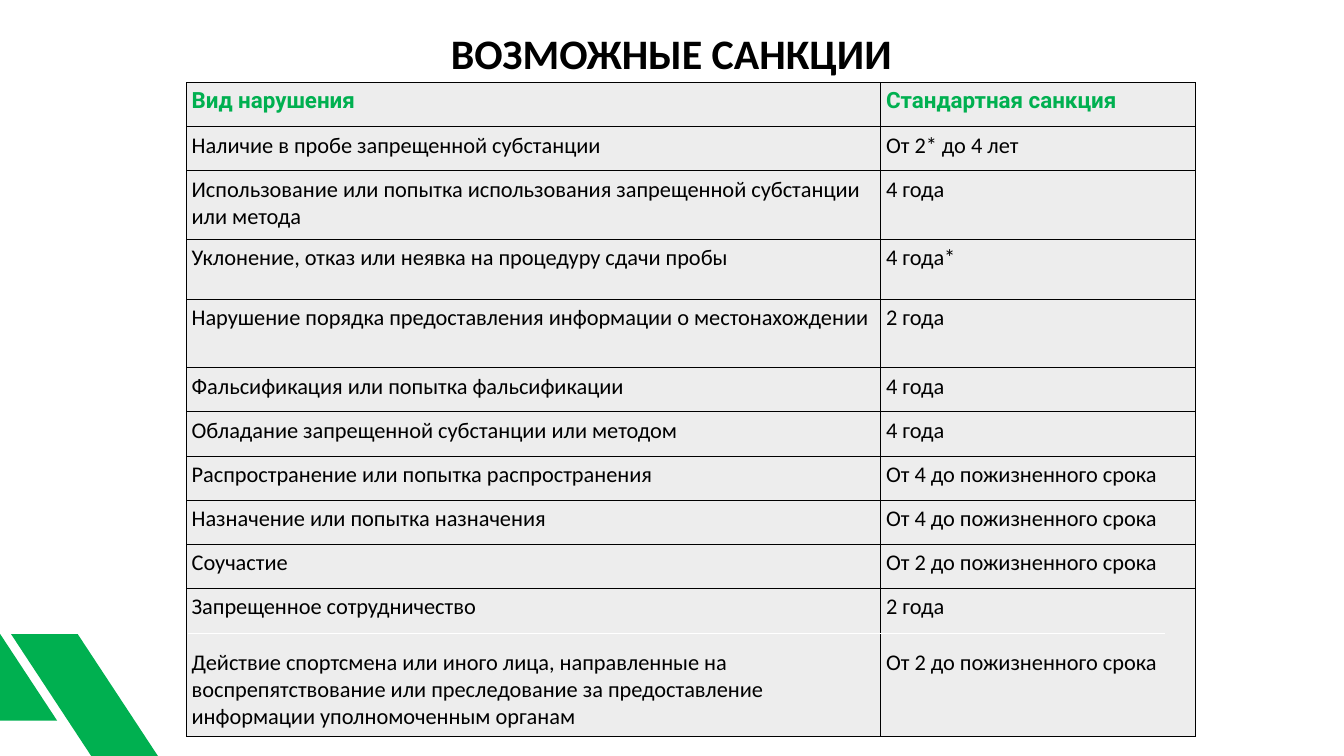
"""Build a slide with a table of possible anti-doping sanctions."""
from typing import NamedTuple

from lxml.etree import SubElement
from pptx import Presentation
from pptx.dml.color import RGBColor
from pptx.enum.shapes import MSO_CONNECTOR as Connector
from pptx.enum.text import PP_ALIGN as Align
from pptx.oxml import parse_xml
from pptx.oxml.ns import nsdecls, qn
from pptx.shapes.shapetree import SlideShapes
from pptx.table import _Cell as Cell
from pptx.text.text import TextFrame
from pptx.util import Cm, Pt

COLORS = {"green": "00B050", "cell": "EDEDED", "black": "000000", "white": "FFFFFF"}
INSET = Cm(0.13)
COLUMN_WIDTHS = (17.5, 7.92)
SINGLE, MEDIUM, DOUBLE, COMBINED = 1.11, 1.51, 1.73, 3.73


class Sanction(NamedTuple):
    violations: str
    penalties: str
    height: float = SINGLE


class Stripe(NamedTuple):
    left: float
    top: float


SANCTIONS = (
    Sanction("Вид нарушения", "Стандартная санкция"),
    Sanction("Наличие в пробе запрещенной субстанции", "От 2* до 4 лет"),
    Sanction("Использование или попытка использования запрещенной субстанции или метода",
             "4 года", DOUBLE),
    Sanction("Уклонение, отказ или неявка на процедуру сдачи пробы", "4 года*", MEDIUM),
    Sanction("Нарушение порядка предоставления информации о местонахождении",
             "2 года", DOUBLE),
    Sanction("Фальсификация или попытка фальсификации", "4 года"),
    Sanction("Обладание запрещенной субстанции или методом", "4 года"),
    Sanction("Распространение или попытка распространения", "От 4 до пожизненного срока"),
    Sanction("Назначение или попытка назначения", "От 4 до пожизненного срока"),
    Sanction("Соучастие", "От 2 до пожизненного срока"),
    Sanction("Запрещенное сотрудничество\n"
             "Действие спортсмена или иного лица, направленные на воспрепятствование "
             "или преследование за предоставление информации уполномоченным органам",
             "2 года\nОт 2 до пожизненного срока", COMBINED),
)
STRIPES = (Stripe(0.28, 15.98), Stripe(-2.26, 15.09))
STRIPE_OUTLINE = ((3.7, 3.07), (1.68, 0), (0, 0), (2.02, 3.07))


def rgb(name: str) -> RGBColor:
    return RGBColor.from_string(COLORS[name])


def write(frame: TextFrame, text: str, *, size: float = 16, font: str = "Calibri",
          color: str = "black", bold: bool = False, align: Align = Align.LEFT,
          gap: float = 20) -> None:
    frame.word_wrap = True
    for index, line in enumerate(text.split("\n")):
        paragraph = frame.add_paragraph() if index else frame.paragraphs[0]
        paragraph.alignment = align
        paragraph.space_before = Pt(gap if index else 0)
        run = paragraph.add_run()
        run.text = line
        run.font.size, run.font.name, run.font.bold = Pt(size), font, bold
        run.font.color.rgb = rgb(color)


def add_borders(cell: Cell, width: float = 0.75) -> None:
    properties = cell._tc.get_or_add_tcPr()
    for index, side in enumerate("LRTB"):
        properties.insert(index, parse_xml(
            f'<a:ln{side} {nsdecls("a")} w="{Pt(width)}"><a:solidFill>'
            f'<a:srgbClr val="{COLORS["black"]}"/></a:solidFill></a:ln{side}>'))


def draw_sanctions(shapes: SlideShapes) -> None:
    heights = [sanction.height for sanction in SANCTIONS]
    table = shapes.add_table(len(SANCTIONS), len(COLUMN_WIDTHS), Cm(4.7), Cm(2.08),
                             Cm(sum(COLUMN_WIDTHS)), Cm(sum(heights))).table
    table.first_row = table.horz_banding = False
    for column, width in zip(table.columns, COLUMN_WIDTHS):
        column.width = Cm(width)
    for row_index, (row, sanction) in enumerate(zip(table.rows, SANCTIONS)):
        row.height = Cm(sanction.height)
        heading = {} if row_index else {"font": "Roboto", "color": "green", "bold": True}
        for cell, text in zip(row.cells, (sanction.violations, sanction.penalties)):
            cell.margin_left = cell.margin_right = INSET
            cell.margin_top = cell.margin_bottom = INSET
            cell.fill.solid()
            cell.fill.fore_color.rgb = rgb("cell")
            add_borders(cell)
            write(cell.text_frame, text, **heading)


def draw_stripe(shapes: SlideShapes, stripe: Stripe) -> None:
    corners = [(Cm(stripe.left + x), Cm(stripe.top + y)) for x, y in STRIPE_OUTLINE]
    builder = shapes.build_freeform(*corners[0])
    builder.add_line_segments(corners[1:], close=True)
    band = builder.convert_to_shape()
    band.shadow.inherit = False
    band.fill.solid()
    band.fill.fore_color.rgb = rgb("green")
    band.line.fill.background()


def draw_title(shapes: SlideShapes) -> None:
    title = shapes.add_textbox(Cm(10.08), Cm(0.56), Cm(13.69), Cm(1.5)).text_frame
    title.margin_left = title.margin_right = INSET
    title.margin_top = title.margin_bottom = INSET
    write(title, "ВОЗМОЖНЫЕ САНКЦИИ", size=30, bold=True, align=Align.CENTER)


def draw_divider(shapes: SlideShapes) -> None:
    divider = shapes.add_connector(Connector.STRAIGHT, Cm(4.75), Cm(15.95),
                                   Cm(29.36), Cm(15.95))
    divider.line.color.rgb = rgb("white")
    divider.line.width = Pt(0.5)
    SubElement(divider._element.spPr, qn("a:effectLst"))


def main() -> None:
    deck = Presentation()
    deck.slide_width, deck.slide_height = Cm(33.87), Cm(19.05)
    shapes = deck.slides.add_slide(deck.slide_layouts[6]).shapes
    draw_sanctions(shapes)
    for stripe in STRIPES:
        draw_stripe(shapes, stripe)
    draw_title(shapes)
    draw_divider(shapes)
    deck.save("out.pptx")


if __name__ == "__main__":
    main()
